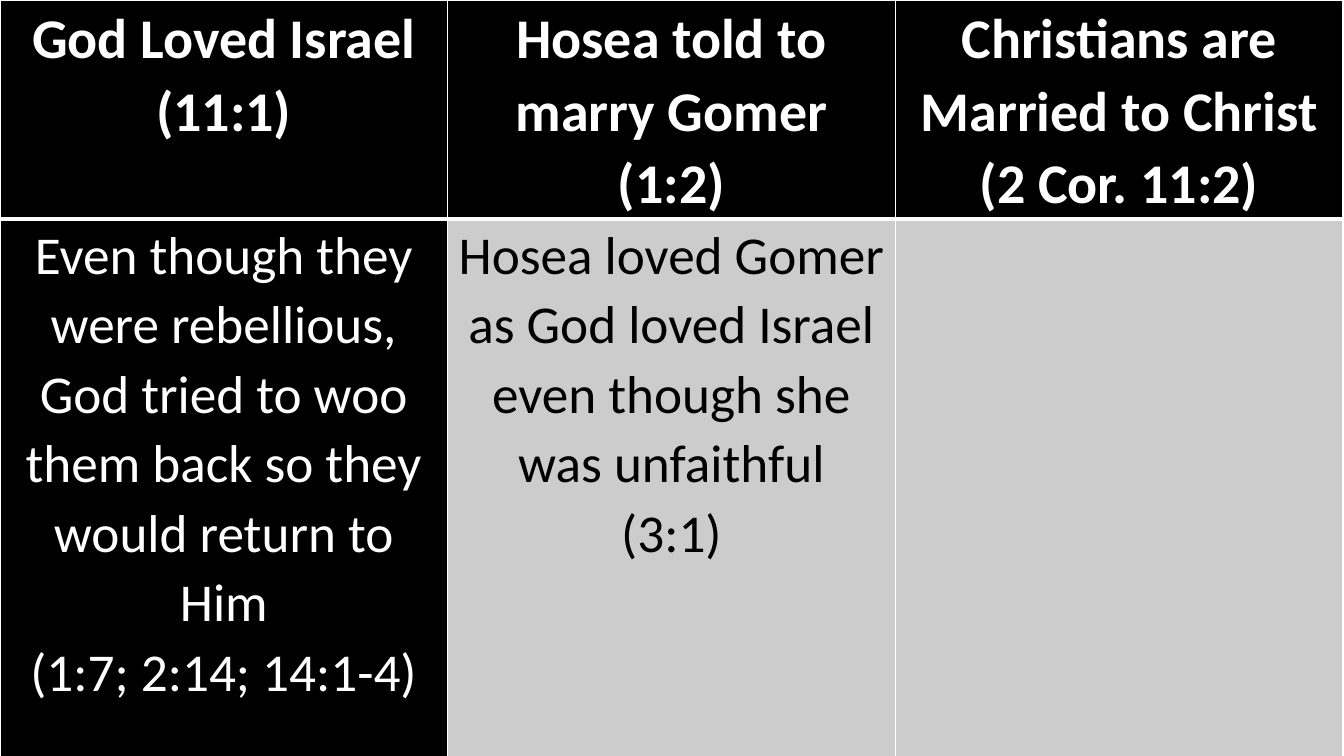
from dataclasses import dataclass

import pptx
import pptx.dml.color
import pptx.enum.text
import pptx.oxml
import pptx.oxml.ns
import pptx.table
import pptx.util

Inches = pptx.util.Inches


@dataclass(frozen=True)
class Theme:
    font: str = "Calibri"
    black: str = "000000"
    white: str = "FFFFFF"
    gray: str = "CCCCCC"
    header_size: float = 40
    body_size: float = 38
    line_spacing: float = 1.07
    thin_border: float = 1
    thick_border: float = 3


@dataclass(frozen=True)
class CellContent:
    paragraphs: tuple[str, ...]
    fill: str
    color: str


THEME = Theme()
HEADERS = [
    CellContent(("God Loved Israel (11:1)",), THEME.black, THEME.white),
    CellContent(("Hosea told to marry Gomer", "(1:2)"), THEME.black, THEME.white),
    CellContent(("Christians are Married to Christ", "(2 Cor. 11:2)"), THEME.black, THEME.white),
]
BODIES = [
    CellContent(
        (
            "Even though they were rebellious, God tried to woo them back "
            "so they would return to Him",
            "(1:7; 2:14; 14:1-4)",
        ),
        THEME.black,
        THEME.white,
    ),
    CellContent(
        ("Hosea loved Gomer as God loved Israel even though she was unfaithful", "(3:1)"),
        THEME.gray,
        THEME.black,
    ),
    CellContent((), THEME.gray, THEME.black),
]
ROW_HEIGHTS = (2.12, 5.38)
COLUMN_WIDTH = 4.44


def rgb(color: str) -> pptx.dml.color.RGBColor:
    return pptx.dml.color.RGBColor.from_string(color)


def write_text(paragraph, text: str, *, size: float, color: str, bold: bool) -> None:
    paragraph.alignment = pptx.enum.text.PP_ALIGN.CENTER
    paragraph.line_spacing = THEME.line_spacing
    run = paragraph.add_run()
    run.text = text
    run.font.name = THEME.font
    run.font.size = pptx.util.Pt(size)
    run.font.bold = bold
    run.font.color.rgb = rgb(color)


def set_borders(cell: pptx.table._Cell, top: float, bottom: float) -> None:
    """Draw white edges, placed before the fill as the schema requires."""
    properties = cell._tc.get_or_add_tcPr()
    widths = {"lnL": THEME.thin_border, "lnR": THEME.thin_border, "lnT": top, "lnB": bottom}
    for position, (edge, width) in enumerate(widths.items()):
        line = pptx.oxml.parse_xml(
            f'<a:{edge} {pptx.oxml.ns.nsdecls("a")} w="{pptx.util.Pt(width)}">'
            f'<a:solidFill><a:srgbClr val="{THEME.white}"/></a:solidFill></a:{edge}>'
        )
        properties.insert(position, line)


def fill_cell(cell: pptx.table._Cell, content: CellContent, *, is_header: bool) -> None:
    cell.margin_left = cell.margin_right = Inches(0.07)
    cell.margin_top = cell.margin_bottom = Inches(0)
    cell.fill.solid()
    cell.fill.fore_color.rgb = rgb(content.fill)
    set_borders(
        cell,
        top=THEME.thin_border if is_header else THEME.thick_border,
        bottom=THEME.thick_border if is_header else THEME.thin_border,
    )
    frame = cell.text_frame
    for index, text in enumerate(content.paragraphs):
        write_text(
            frame.add_paragraph() if index else frame.paragraphs[0],
            text,
            size=THEME.header_size if is_header else THEME.body_size,
            color=content.color,
            bold=is_header,
        )


def main() -> None:
    presentation = pptx.Presentation()
    presentation.slide_width = Inches(13.33)
    presentation.slide_height = Inches(7.5)
    slide = presentation.slides.add_slide(presentation.slide_layouts.get_by_name("Blank"))
    slide.background.fill.solid()
    slide.background.fill.fore_color.rgb = rgb(THEME.black)

    table = slide.shapes.add_table(
        len(ROW_HEIGHTS), len(HEADERS), Inches(0), Inches(0),
        Inches(COLUMN_WIDTH * len(HEADERS)), Inches(sum(ROW_HEIGHTS)),
    ).table
    for column in table.columns:
        column.width = Inches(COLUMN_WIDTH)
    for row_index, (height, contents) in enumerate(zip(ROW_HEIGHTS, (HEADERS, BODIES))):
        row = table.rows[row_index]
        row.height = Inches(height)
        for cell, content in zip(row.cells, contents):
            fill_cell(cell, content, is_header=row_index == 0)

    presentation.save("out.pptx")


if __name__ == "__main__":
    main()
